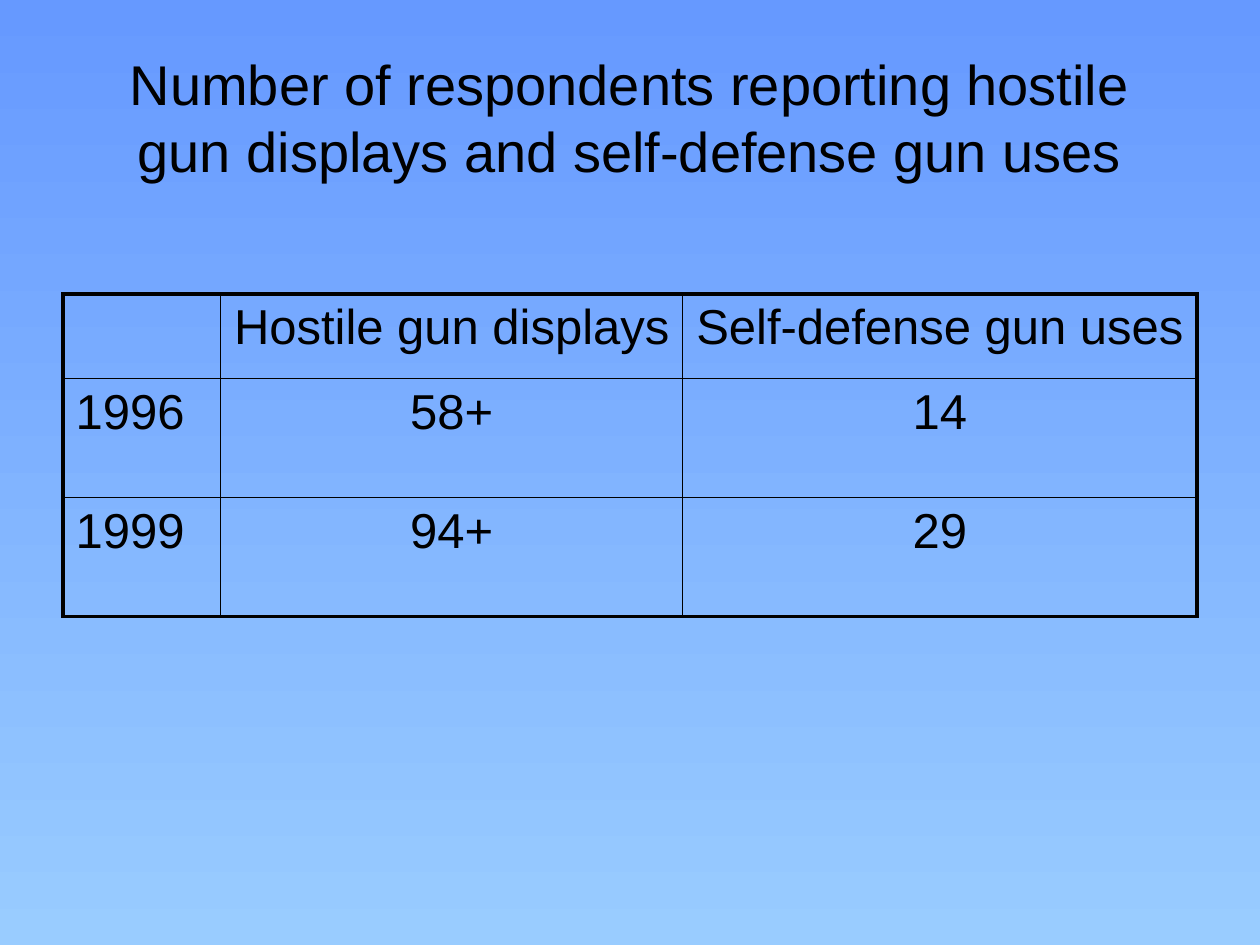
from lxml.etree import SubElement
from pptx import Presentation
from pptx.dml.color import RGBColor
from pptx.enum.text import MSO_ANCHOR, PP_ALIGN
from pptx.oxml.ns import qn
from pptx.util import Cm, Pt

COLORS = {"ink": "000000", "sky_top": "6699FF", "sky_bottom": "99CCFF"}
FONT = "Arial"
TITLE = "Number of respondents reporting hostile gun displays and self-defense gun uses"
ROWS = [
    ["", "Hostile gun displays", "Self-defense gun uses"],
    ["1996", "58+", "14"],
    ["1999", "94+", "29"],
]
COLUMN_WIDTHS = [3.18, 9.31, 10.37]
ROW_HEIGHTS = [1.7, 2.4, 2.4]
LEFT = Cm(1.27)
OUTER_LINE, INNER_LINE = Pt(2.25), Pt(1)


def paint_background(page):
    fill = page.background.fill
    fill.gradient()
    fill.gradient_angle = 270
    for stop, name, position in zip(fill.gradient_stops, ("sky_top", "sky_bottom"), (0, 1)):
        stop.color.rgb = RGBColor.from_string(COLORS[name])
        stop.position = position


def write_text(frame, text, size, align):
    para = frame.paragraphs[0]
    para.alignment = align
    span = para.add_run()
    span.text = text
    span.font.name = FONT
    span.font.size = Pt(size)
    span.font.color.rgb = RGBColor.from_string(COLORS["ink"])


def add_title(page):
    box = page.shapes.title
    box.left, box.top, box.width, box.height = LEFT, Cm(0.76), Cm(22.86), Cm(3.18)
    box.text_frame.word_wrap = True
    box.text_frame.vertical_anchor = MSO_ANCHOR.MIDDLE
    write_text(box.text_frame, TITLE, 32, PP_ALIGN.CENTER)


def draw_borders(cell, outer_sides):
    properties = cell._tc.get_or_add_tcPr()
    for side in "LRTB":
        width = OUTER_LINE if side in outer_sides else INNER_LINE
        line = SubElement(properties, qn(f"a:ln{side}"), w=str(width))
        solid = SubElement(line, qn("a:solidFill"))
        SubElement(solid, qn("a:srgbClr"), val=COLORS["ink"])


def add_counts_table(page):
    row_count, column_count = len(ROWS), len(COLUMN_WIDTHS)
    frame = page.shapes.add_table(
        row_count, column_count, LEFT, Cm(5.93), Cm(sum(COLUMN_WIDTHS)), Cm(sum(ROW_HEIGHTS))
    )
    table = frame.table
    table.first_row = table.horz_banding = False
    for column, width in zip(table.columns, COLUMN_WIDTHS):
        column.width = Cm(width)
    for row, height in zip(table.rows, ROW_HEIGHTS):
        row.height = Cm(height)
    for r, texts in enumerate(ROWS):
        for c, text in enumerate(texts):
            cell = table.cell(r, c)
            edges = {"L": c == 0, "R": c == column_count - 1, "T": r == 0, "B": r == row_count - 1}
            draw_borders(cell, [side for side, is_outer in edges.items() if is_outer])
            cell.fill.background()
            if text:
                align = PP_ALIGN.LEFT if c == 0 else PP_ALIGN.CENTER
                write_text(cell.text_frame, text, 28, align)


def main():
    deck = Presentation()
    deck.slide_width, deck.slide_height = Cm(25.4), Cm(19.05)
    page = deck.slides.add_slide(deck.slide_layouts[5])
    paint_background(page)
    add_title(page)
    add_counts_table(page)
    deck.save("out.pptx")


if __name__ == "__main__":
    main()
